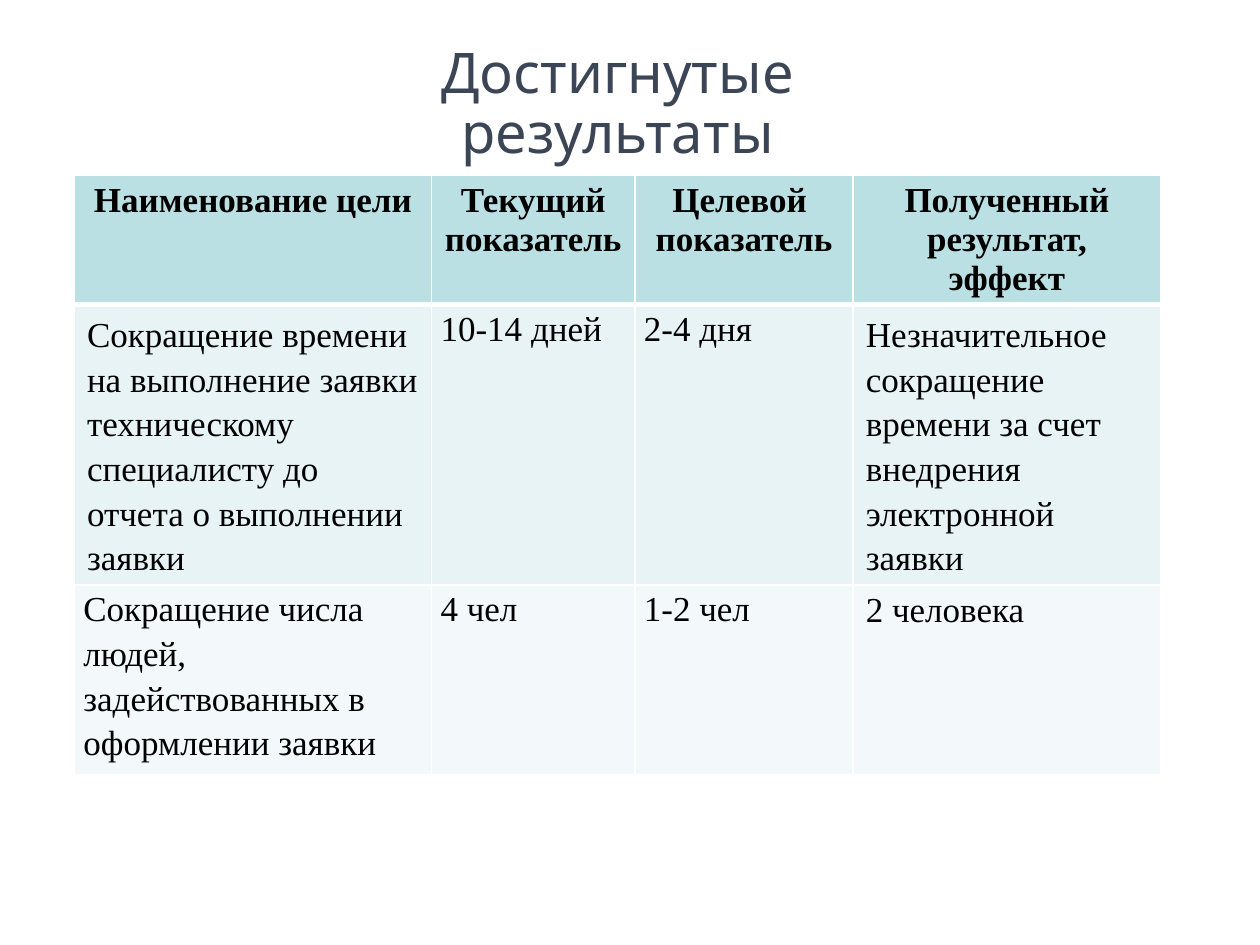
import pptx
import pptx.dml.color
import pptx.enum.text
import pptx.oxml
import pptx.oxml.ns
import pptx.util

Cm = pptx.util.Cm
Pt = pptx.util.Pt
ALIGN = pptx.enum.text.PP_ALIGN
ANCHOR = pptx.enum.text.MSO_ANCHOR

HUES = {
    "title": "3B4555",
    "text": "000000",
    "line": "FFFFFF",
    "head": "BBE0E3",
    "odd": "E7F3F4",
    "even": "F3F9FA",
}
ROWS = [
    ["Наименование цели", "Текущий показатель", "Целевой \nпоказатель",
     "Полученный результат, эффект"],
    ["Сокращение времени на выполнение заявки техническому специалисту "
     "до отчета о выполнении заявки", "10-14 дней", "2-4 дня",
     "Незначительное сокращение времени за счет внедрения "
     "электронной заявки"],
    ["Сокращение числа людей, задействованных в оформлении заявки",
     "4 чел", "1-2 чел", "2 человека"],
]
WIDTHS = [7.2, 4.1, 4.4, 6.2]
HEIGHTS = [2.58, 5.65, 3.82]
TIGHT = {(1, 1), (1, 2), (2, 0), (2, 1), (2, 2)}


def color(name):
    return pptx.dml.color.RGBColor.from_string(HUES[name])


def style(font, face, size, hue, bold=False):
    font.name = face
    font.size = Pt(size)
    font.bold = bold
    font.color.rgb = color(hue)


def edge(cell, side, width):
    props = cell._tc.get_or_add_tcPr()
    line = pptx.oxml.parse_xml(
        f'<a:{side} {pptx.oxml.ns.nsdecls("a")} w="{Pt(width)}">'
        f'<a:solidFill><a:srgbClr val="{HUES["line"]}"/></a:solidFill>'
        f'</a:{side}>')
    props.append(line)


def add_title(slide, left, top, width, height):
    title = slide.shapes.title
    title.left, title.top = Cm(left), Cm(top)
    title.width, title.height = Cm(width), Cm(height)
    frame = title.text_frame
    frame.text = "Достигнутые результаты"
    frame.word_wrap = True
    frame.auto_size = pptx.enum.text.MSO_AUTO_SIZE.NONE
    frame.vertical_anchor = ANCHOR.TOP
    frame.margin_top = Cm(0.2)
    para = frame.paragraphs[0]
    para.alignment = ALIGN.CENTER
    para.line_spacing = 0.88
    style(para.runs[0].font, "League Spartan", 32, "title")


def fill_cell(cell, text, row, col):
    head = row == 0
    cell.text_frame.text = text
    cell.vertical_anchor = ANCHOR.TOP
    if (row, col) in TIGHT:
        cell.margin_left = cell.margin_right = Cm(0.18)
        cell.margin_top = cell.margin_bottom = 0
    for para in cell.text_frame.paragraphs:
        para.alignment = ALIGN.CENTER if head else ALIGN.LEFT
        if not head and (row, col) != (2, 3):
            para.line_spacing = 1.15
        for run in para.runs:
            style(run.font, "Times New Roman", 20, "text", head)
    for side in ("lnL", "lnR", "lnT", "lnB"):
        thick = (row, side) in ((0, "lnB"), (1, "lnT"))
        edge(cell, side, 3 if thick else 1)
    cell.fill.solid()
    cell.fill.fore_color.rgb = color(("head", "odd", "even")[row])


def add_goals(slide, left, top):
    table = slide.shapes.add_table(
        len(ROWS), len(WIDTHS), Cm(left), Cm(top),
        Cm(sum(WIDTHS)), Cm(sum(HEIGHTS))).table
    for col, width in zip(table.columns, WIDTHS):
        col.width = Cm(width)
    for row, height in zip(table.rows, HEIGHTS):
        row.height = Cm(height)
    for r, texts in enumerate(ROWS):
        for c, text in enumerate(texts):
            fill_cell(table.cell(r, c), text, r, c)


def main():
    deck = pptx.Presentation()
    deck.slide_width, deck.slide_height = Cm(25.4), Cm(19.05)
    slide = deck.slides.add_slide(deck.slide_layouts[5])
    add_title(slide, 5.72, 0.74, 13.46, 1.63)
    add_goals(slide, 1.5, 3.53)
    deck.save("out.pptx")


if __name__ == "__main__":
    main()
